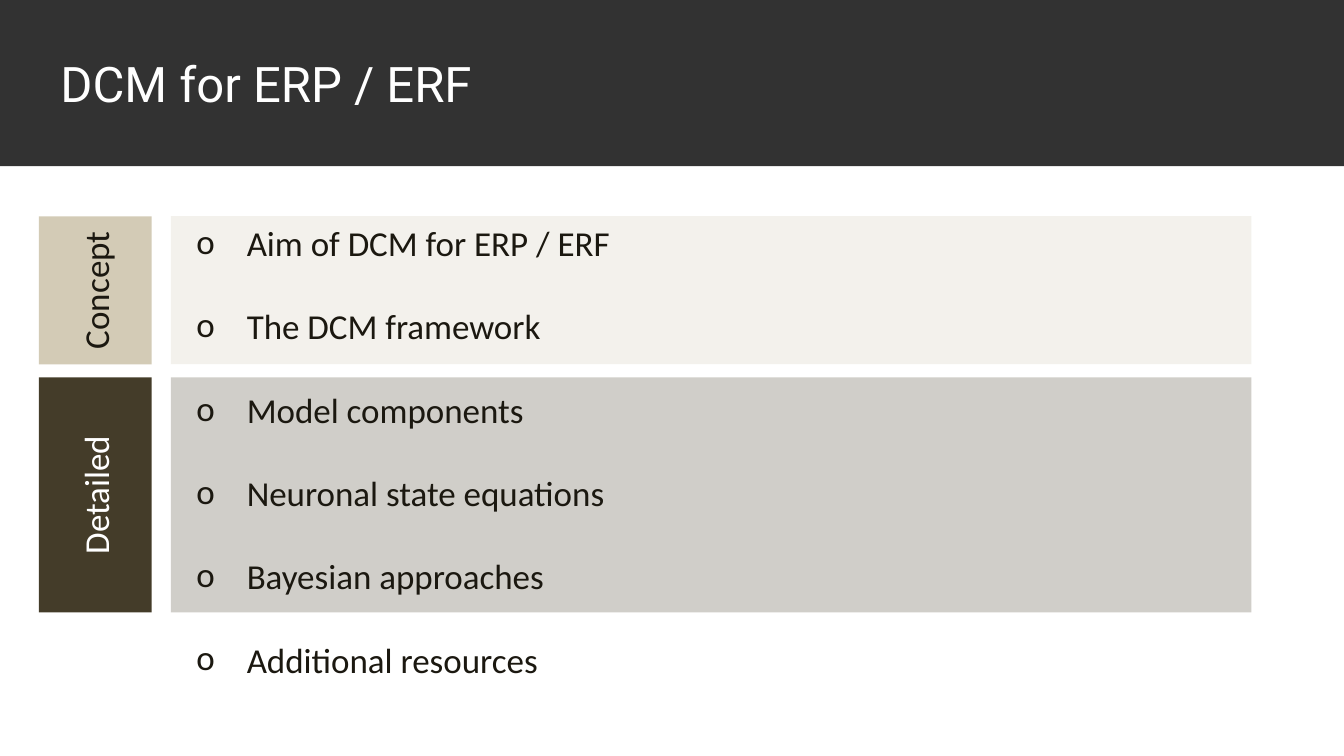
from lxml.etree import SubElement
from pptx import Presentation
from pptx.dml.color import RGBColor
from pptx.enum.shapes import MSO_SHAPE
from pptx.enum.text import MSO_ANCHOR, MSO_AUTO_SIZE, PP_ALIGN
from pptx.oxml.ns import qn
from pptx.util import Cm, Pt

COLORS = {
    "header": "323232",
    "sand": "D3CBB6",
    "brown": "443C29",
    "ink": "1B1810",
    "white": "FFFFFF",
}
BODY_FONT, TITLE_FONT = "Calibri", "Roboto"
BODY_SIZE = 25

# label, top, height, fill colour, label colour
SECTIONS = [
    ("Concept", 5.45, 3.73, "sand", "ink"),
    ("Detailed", 9.51, 5.92, "brown", "white"),
]
TOPICS = [
    "Aim of DCM for ERP / ERF",
    "The DCM framework",
    "Model components",
    "Neuronal state equations",
    "Bayesian approaches",
    "Additional resources",
]


def rgb(name):
    return RGBColor.from_string(COLORS[name])


def add_run(p, text, font, size, color):
    r = p.add_run()
    r.text = text
    r.font.name = font
    r.font.size = Pt(size)
    r.font.color.rgb = rgb(color)


def set_indent(p, left, first):
    pPr = p._p.get_or_add_pPr()
    pPr.set("marL", str(Cm(left)))
    pPr.set("indent", str(Cm(first)))
    return pPr


def add_rect(s, left, top, width, height, color, opacity=100):
    sp = s.shapes.add_shape(MSO_SHAPE.RECTANGLE, Cm(left), Cm(top), Cm(width), Cm(height))
    sp.shadow.inherit = False
    sp.line.fill.background()
    sp.fill.solid()
    sp.fill.fore_color.rgb = rgb(color)
    if opacity < 100:
        clr = sp._element.spPr.find(qn("a:solidFill"))[0]
        SubElement(clr, qn("a:alpha"), val=str(opacity * 1000))
    return sp


def add_title(s, text, left, top, width, height):
    sp = s.shapes.title
    sp.left, sp.top, sp.width, sp.height = Cm(left), Cm(top), Cm(width), Cm(height)
    sp.fill.solid()
    sp.fill.fore_color.rgb = rgb("header")
    tf = sp.text_frame
    tf.auto_size = MSO_AUTO_SIZE.NONE
    tf.vertical_anchor = MSO_ANCHOR.MIDDLE
    p = tf.paragraphs[0]
    p.alignment = PP_ALIGN.LEFT
    set_indent(p, 1.27, 0)
    add_run(p, text, TITLE_FONT, 35, "white")


def add_section(s, label, left, top, width, height, color, text_color):
    label_width, gap = 2.84, 0.49
    # Tinted band behind the topics
    band_left = label_width + gap
    add_rect(s, left + band_left, top, width - band_left, height, color, 25)
    # Label turned to read upwards, so its sides swap about the same centre
    shift = (height - label_width) / 2
    sp = add_rect(s, left - shift, top + shift, height, label_width, color)
    sp.rotation = 270
    tf = sp.text_frame
    tf.vertical_anchor = MSO_ANCHOR.MIDDLE
    p = tf.paragraphs[0]
    p.alignment = PP_ALIGN.CENTER
    add_run(p, label, BODY_FONT, BODY_SIZE, text_color)


def add_topics(s, topics, left, top, width, height):
    tf = s.shapes.add_textbox(Cm(left), Cm(top), Cm(width), Cm(height)).text_frame
    tf.word_wrap = True
    for i, topic in enumerate(topics):
        p = tf.add_paragraph() if i else tf.paragraphs[0]
        if i:
            p.space_before = Pt(29.5)
        pPr = set_indent(p, 2.54, -1.27)
        SubElement(pPr, qn("a:buFont"), typeface=BODY_FONT)
        SubElement(pPr, qn("a:buChar"), char="o")
        add_run(p, topic, BODY_FONT, BODY_SIZE, "ink")


def main():
    prs = Presentation()
    prs.slide_width, prs.slide_height = Cm(33.87), Cm(19.05)
    s = prs.slides.add_slide(prs.slide_layouts[5])
    add_title(s, "DCM for ERP / ERF", 0, 0, 33.87, 4.19)
    for label, top, height, color, text_color in SECTIONS:
        add_section(s, label, 0.98, top, 30.56, height, color, text_color)
    add_topics(s, TOPICS, 3.43, 5.46, 30.43, 12.4)
    prs.save("out.pptx")


if __name__ == "__main__":
    main()
